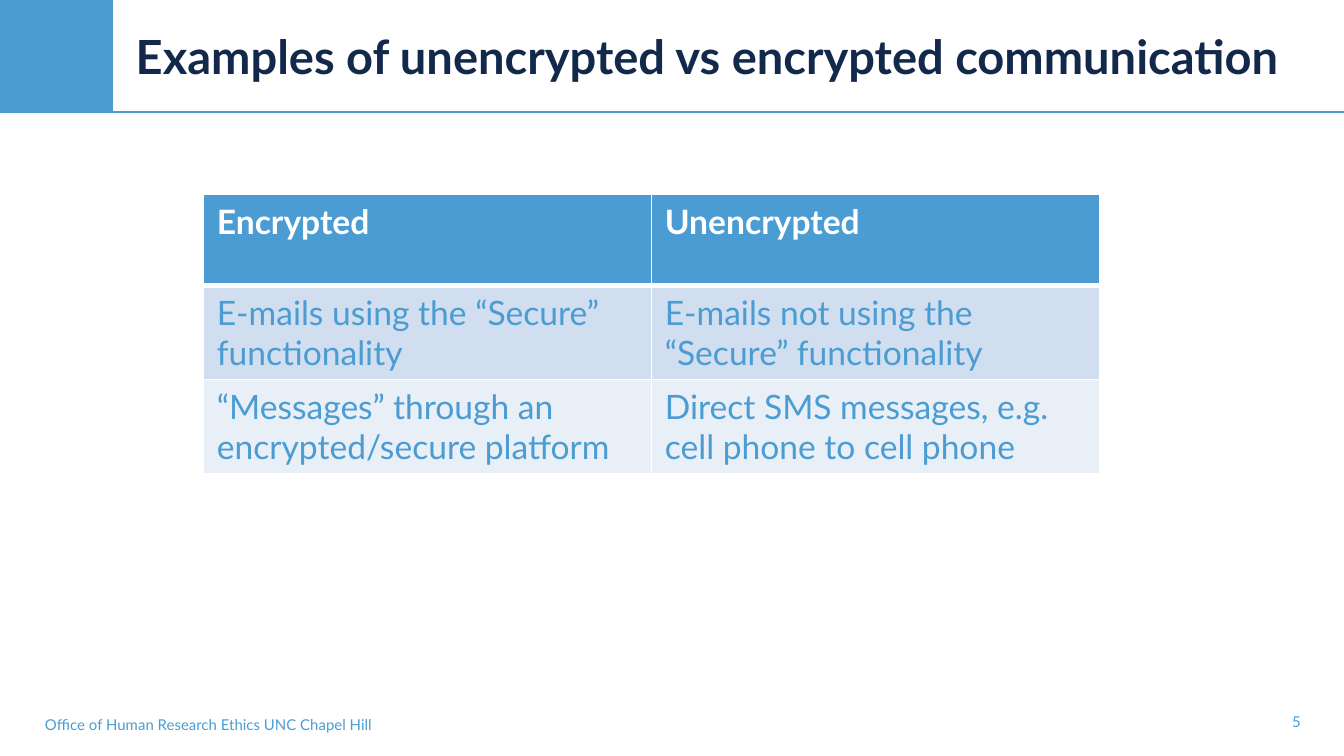
from pptx import Presentation
from pptx.dml.color import RGBColor
from pptx.enum.shapes import MSO_CONNECTOR, MSO_SHAPE
from pptx.enum.text import MSO_ANCHOR, MSO_AUTO_SIZE, PP_ALIGN
from pptx.oxml.ns import qn
from pptx.util import Pt
from lxml.etree import SubElement

BLUE, NAVY, WHITE = "4B9CD3", "13294B", "FFFFFF"
ROW_FILLS = [BLUE, "D0DEEF", "E9EFF7"]
ROWS = [
    ["Encrypted", "Unencrypted"],
    ["E-mails using the “Secure” functionality", "E-mails not using the “Secure” functionality"],
    ["“Messages” through an encrypted/secure platform",
     "Direct SMS messages, e.g. cell phone to cell phone"],
]


def color(value):
    """Turn a hex string into a colour."""
    return RGBColor.from_string(value)


def format_text(text_frame, size, hex_color, bold=False, align=PP_ALIGN.LEFT):
    """Format every run of a text frame."""
    for paragraph in text_frame.paragraphs:
        paragraph.alignment = align
        for run in paragraph.runs:
            run.font.name = "Lato"
            run.font.size = Pt(size)
            run.font.bold = bold
            run.font.color.rgb = color(hex_color)


def place(shape, left, top, width, height):
    """Move a shape to a box given in points."""
    shape.left, shape.top = Pt(left), Pt(top)
    shape.width, shape.height = Pt(width), Pt(height)


def add_header(slide, left, top, width, height, text):
    """Add the colour block, the rule and the title."""
    block = slide.shapes.add_shape(
        MSO_SHAPE.RECTANGLE, Pt(left), Pt(top), Pt(60.5), Pt(height))
    block.shadow.inherit = False
    block.fill.solid()
    block.fill.fore_color.rgb = color(BLUE)
    block.line.fill.background()

    bottom = Pt(top + height)
    rule = slide.shapes.add_connector(
        MSO_CONNECTOR.STRAIGHT, Pt(left), bottom, Pt(left + width), bottom)
    rule.line.color.rgb = color(BLUE)
    rule.line.width = Pt(1)
    SubElement(rule._element.spPr, qn("a:effectLst"))

    title = slide.shapes.title
    place(title, left + 65.5, top, width - 81.5, height)
    text_frame = title.text_frame
    text_frame.text = text
    text_frame.word_wrap = True
    text_frame.auto_size = MSO_AUTO_SIZE.NONE
    text_frame.vertical_anchor = MSO_ANCHOR.MIDDLE
    format_text(text_frame, 25.2, NAVY, bold=True)


def add_label(slide, left, top, width, height, text, align, anchor):
    """Add one small footer text."""
    label = slide.shapes.add_textbox(Pt(left), Pt(top), Pt(width), Pt(height))
    text_frame = label.text_frame
    text_frame.text = text
    text_frame.word_wrap = True
    text_frame.vertical_anchor = anchor
    format_text(text_frame, 8, BLUE, align=align)


def add_footer(slide, left, top, width, height, office, number):
    """Add the office name at the left and the page number at the right."""
    add_label(slide, left, top, 351, height, office, PP_ALIGN.LEFT, MSO_ANCHOR.MIDDLE)
    add_label(slide, left + width - 30, top, 30, height, number,
              PP_ALIGN.RIGHT, MSO_ANCHOR.TOP)


def add_borders(cell, top, bottom):
    """Draw white borders around a cell."""
    properties = cell._tc.get_or_add_tcPr()
    for side, width in (("L", 1), ("R", 1), ("T", top), ("B", bottom)):
        line = SubElement(properties, qn(f"a:ln{side}"), w=str(Pt(width)))
        fill = SubElement(line, qn("a:solidFill"))
        SubElement(fill, qn("a:srgbClr"), val=WHITE)


def add_comparison(slide, left, top, width, height, rows):
    """Add the comparison table with a header row."""
    table = slide.shapes.add_table(
        len(rows), len(rows[0]), Pt(left), Pt(top), Pt(width), Pt(height)).table
    for row_index, texts in enumerate(rows):
        is_header = row_index == 0
        for column_index, text in enumerate(texts):
            cell = table.cell(row_index, column_index)
            add_borders(cell, top=3 if row_index == 1 else 1, bottom=3 if is_header else 1)
            cell.fill.solid()
            cell.fill.fore_color.rgb = color(ROW_FILLS[row_index])
            cell.text_frame.text = text
            format_text(cell.text_frame, 18, WHITE if is_header else BLUE, bold=is_header)


def main():
    """Build and save the presentation."""
    presentation = Presentation()
    presentation.slide_width, presentation.slide_height = Pt(720), Pt(405)
    slide = presentation.slides.add_slide(presentation.slide_layouts[5])
    add_header(slide, 0, 0, 720, 60, "Examples of unencrypted vs encrypted communication")
    add_footer(slide, 17, 378, 687, 20, "Office of Human Research Ethics UNC Chapel Hill", "5")
    add_comparison(slide, 109, 104, 480, 147, ROWS)
    presentation.save("out.pptx")


if __name__ == "__main__":
    main()
